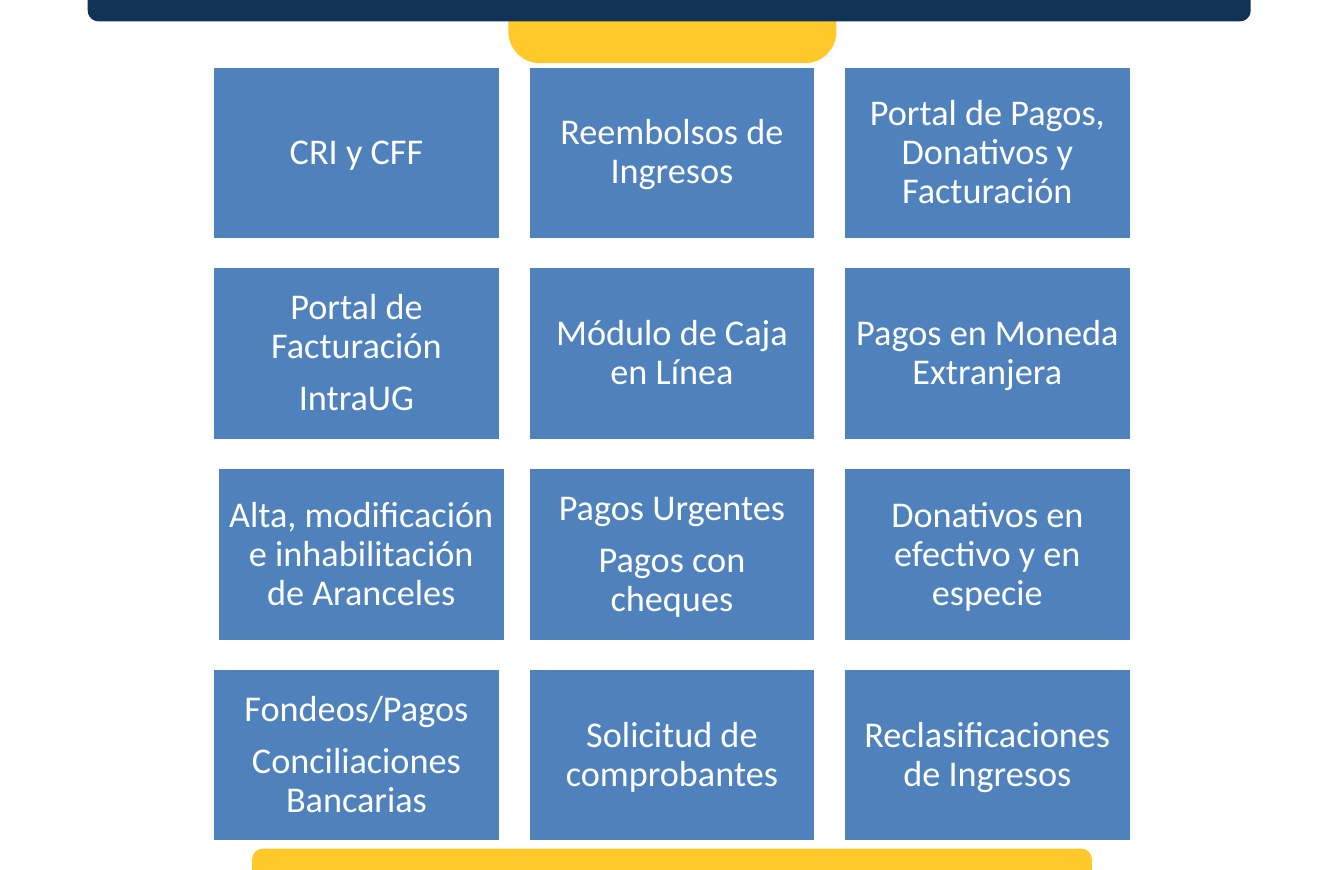
from dataclasses import dataclass

from pptx import Presentation
from pptx.dml.color import RGBColor
from pptx.enum.shapes import MSO_SHAPE
from pptx.enum.text import MSO_ANCHOR, PP_ALIGN
from pptx.util import Inches, Pt


@dataclass(frozen=True)
class Theme:
    navy: RGBColor = RGBColor.from_string("123358")
    yellow: RGBColor = RGBColor.from_string("FFC82B")
    blue: RGBColor = RGBColor.from_string("4F81BD")
    white: RGBColor = RGBColor.from_string("FFFFFF")
    font: str = "Calibri"
    text_size: float = 33
    space_after: float = 11.8


THEME = Theme()
SLIDE_WIDTH, SLIDE_HEIGHT = 17, 11

SERVICES = [
    [["CRI y CFF"], ["Reembolsos de Ingresos"], ["Portal de Pagos, Donativos y Facturación"]],
    [["Portal de Facturación", "IntraUG"], ["Módulo de Caja en Línea"], ["Pagos en Moneda Extranjera"]],
    [["Alta, modificación e inhabilitación de Aranceles"], ["Pagos Urgentes", "Pagos con cheques"],
     ["Donativos en efectivo y en especie"]],
    [["Fondeos/Pagos", "Conciliaciones Bancarias"], ["Solicitud de comprobantes"],
     ["Reclasificaciones de Ingresos"]],
]
BANDS = [
    {"box": (6.43, 0, 4.15, 0.8), "color": THEME.yellow, "corners": (0, 0.5)},
    {"box": (1.11, 0, 14.71, 0.27), "color": THEME.navy, "corners": (0, 0.5)},
    {"box": (3.19, 10.73, 10.62, 0.27), "color": THEME.yellow, "corners": (0.5, 0)},
]

CARD_WIDTH, CARD_HEIGHT = 3.63, 2.18
GAP = 0.36
GRID_TOP = 0.84
GRID_LEFT = (SLIDE_WIDTH - 3 * CARD_WIDTH - 2 * GAP) / 2
CARD_SHIFTS = {(2, 0): 0.06}


def add_filled_shape(slide, kind, box, color):
    shape = slide.shapes.add_shape(kind, *(Inches(length) for length in box))
    shape.shadow.inherit = False
    shape.fill.solid()
    shape.fill.fore_color.rgb = color
    return shape


def add_band(slide, band):
    shape = add_filled_shape(slide, MSO_SHAPE.ROUND_2_SAME_RECTANGLE, band["box"], band["color"])
    shape.line.fill.background()
    for index, corner in enumerate(band["corners"]):
        shape.adjustments[index] = corner


def add_card(slide, box, lines):
    shape = add_filled_shape(slide, MSO_SHAPE.RECTANGLE, box, THEME.blue)
    shape.line.color.rgb = THEME.white
    shape.line.width = Pt(2)
    text_frame = shape.text_frame
    text_frame.word_wrap = True
    text_frame.vertical_anchor = MSO_ANCHOR.MIDDLE
    text_frame.margin_left = text_frame.margin_right = Inches(0.14)
    text_frame.margin_top = text_frame.margin_bottom = Inches(0.14)
    text_frame.text = "\n".join(lines)
    for paragraph in text_frame.paragraphs:
        paragraph.alignment = PP_ALIGN.CENTER
        paragraph.line_spacing = 0.9
        paragraph.space_after = Pt(THEME.space_after)
        for run in paragraph.runs:
            run.font.name = THEME.font
            run.font.size = Pt(THEME.text_size)
            run.font.color.rgb = THEME.white


def main():
    presentation = Presentation()
    presentation.slide_width = Inches(SLIDE_WIDTH)
    presentation.slide_height = Inches(SLIDE_HEIGHT)
    slide = presentation.slides.add_slide(presentation.slide_layouts[6])
    for band in BANDS:
        add_band(slide, band)
    for row, cards in enumerate(SERVICES):
        for column, lines in enumerate(cards):
            left = GRID_LEFT + column * (CARD_WIDTH + GAP) + CARD_SHIFTS.get((row, column), 0)
            top = GRID_TOP + row * (CARD_HEIGHT + GAP)
            add_card(slide, (left, top, CARD_WIDTH, CARD_HEIGHT), lines)
    presentation.save("out.pptx")


if __name__ == "__main__":
    main()
